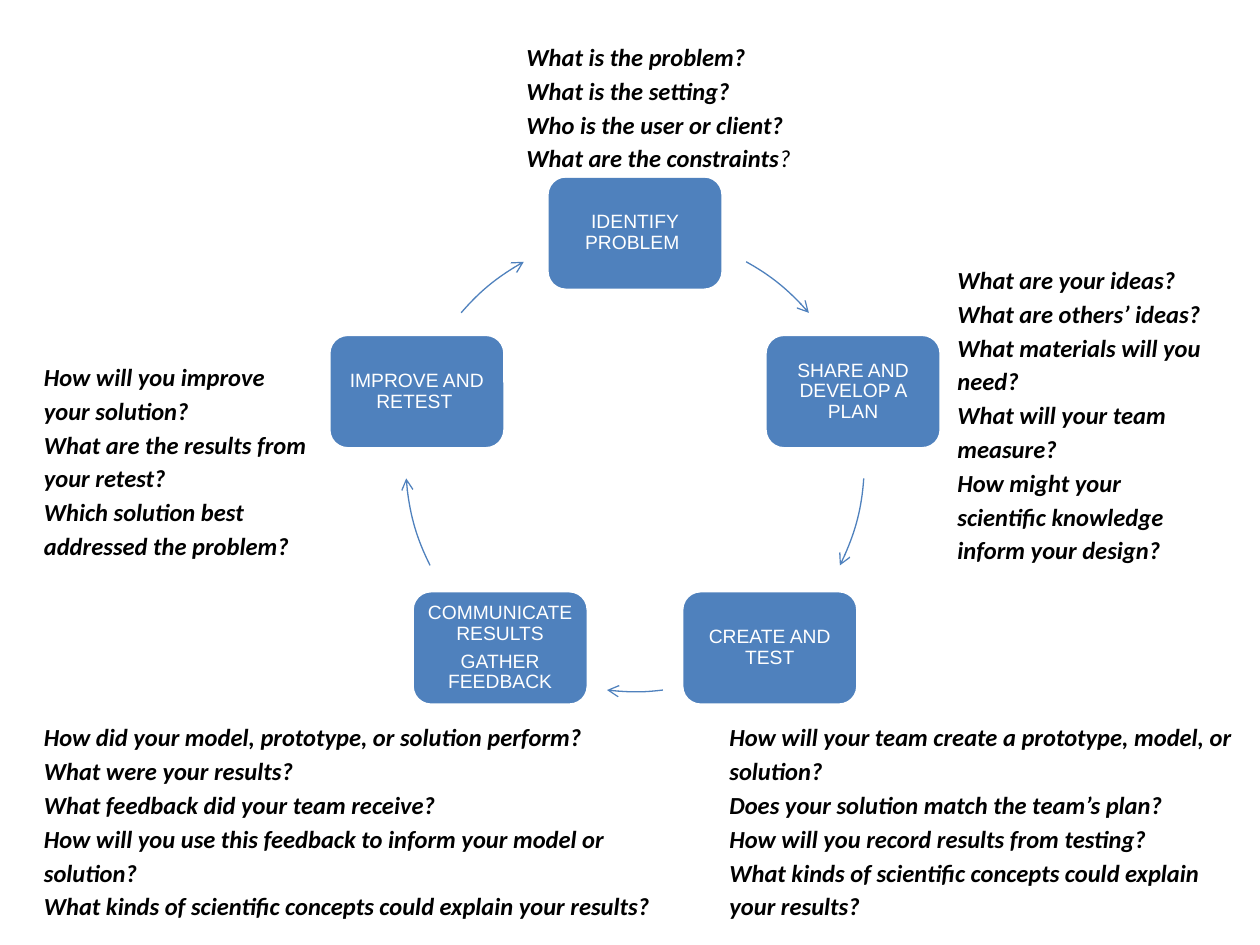
from dataclasses import dataclass
from math import cos, radians, sin, tan

from lxml.etree import SubElement
from pptx import Presentation
from pptx.dml.color import RGBColor
from pptx.enum.shapes import MSO_SHAPE
from pptx.enum.text import MSO_ANCHOR, PP_ALIGN
from pptx.oxml.ns import qn
from pptx.util import Inches, Pt


@dataclass(frozen=True)
class Theme:
    blue = RGBColor(0x4F, 0x81, 0xBD)
    white = RGBColor(0xFF, 0xFF, 0xFF)
    black = RGBColor(0, 0, 0)
    step_font = "Arial"
    question_font = "Calibri"
    step_size = Pt(11)
    question_size = Pt(14)
    step_outline = Pt(2.08)
    arrow_width = Pt(0.75)


THEME = Theme()
CENTER_X, CENTER_Y, RADIUS = 5.04, 3.67, 1.82
STEP_WIDTH, STEP_HEIGHT = 1.4, 0.91

STEPS = [
    ["IDENTIFY PROBLEM "],
    ["SHARE AND DEVELOP A PLAN"],
    ["CREATE AND TEST"],
    ["COMMUNICATE RESULTS", "GATHER FEEDBACK"],
    ["IMPROVE AND RETEST "],
]
ARROW_ANGLES = [(-61, -40.7), (4, 26.7), (83, 97), (153.3, 176), (220.7, 241)]

QUESTIONS = [
    ((4.08, 0.25, 2.73, 1.16), [
        "What is the problem?",
        "What is the setting?",
        "Who is the user or client?",
        ("What are the constraints", "?"),
    ]),
    ((7.5, 2.02, 2.17, 2.65), [
        "What are your ideas?",
        "What are others’ ideas?",
        "What materials will you need?",
        "What will your team measure?",
        "How might your scientific knowledge inform your design?",
    ]),
    ((5.69, 5.65, 4.25, 1.85), [
        "How will your team create a prototype, model, or solution?",
        "Does your solution match the team’s plan?",
        "How will you record results from testing?",
        "What kinds of scientific concepts could explain your results?",
    ]),
    ((0.25, 5.65, 5.2, 1.85), [
        "How did your model, prototype, or solution perform?",
        "What were your results?",
        "What feedback did your team receive?",
        "How will you use this feedback to inform your model or solution?",
        "What kinds of scientific concepts could explain your results?",
    ]),
    ((0.25, 2.79, 2.33, 1.88), [
        "How will you improve your solution?",
        "What are the results from your retest?",
        "Which solution best addressed the problem?",
    ]),
]


def on_circle(degrees):
    angle = radians(degrees)
    return CENTER_X + RADIUS * cos(angle), CENTER_Y + RADIUS * sin(angle)


def paragraphs_for(frame, lines):
    for index, line in enumerate(lines):
        yield (frame.add_paragraph() if index else frame.paragraphs[0]), line


def add_run(paragraph, text, font_name, size, color, bold=False, italic=False):
    run = paragraph.add_run()
    run.text = text
    font = run.font
    font.name, font.size, font.bold, font.italic = font_name, size, bold, italic
    font.color.rgb = color


def add_panel(slide, preset, box, fill):
    panel = slide.shapes.add_shape(preset, *(Inches(value) for value in box))
    panel.shadow.inherit = False
    panel.fill.solid()
    panel.fill.fore_color.rgb = fill
    panel.text_frame.word_wrap = True
    return panel


def add_step(slide, degrees, lines):
    x, y = on_circle(degrees)
    box = (x - STEP_WIDTH / 2, y - STEP_HEIGHT / 2, STEP_WIDTH, STEP_HEIGHT)
    step = add_panel(slide, MSO_SHAPE.ROUNDED_RECTANGLE, box, THEME.blue)
    step.line.color.rgb = THEME.white
    step.line.width = THEME.step_outline
    frame = step.text_frame
    frame.vertical_anchor = MSO_ANCHOR.MIDDLE
    frame.margin_left = frame.margin_right = Inches(0.05)
    frame.margin_top = frame.margin_bottom = Inches(0.05)
    for paragraph, line in paragraphs_for(frame, lines):
        paragraph.alignment = PP_ALIGN.CENTER
        paragraph.line_spacing = 0.9
        paragraph.space_after = Pt(4)
        add_run(paragraph, line, THEME.step_font, THEME.step_size, THEME.white)


def add_arc_arrow(slide, start, end):
    handle = 4 / 3 * tan(radians(end - start) / 4) * RADIUS
    (x1, y1), (x2, y2) = on_circle(start), on_circle(end)
    a, b = radians(start), radians(end)
    curve_points = [
        (x1 - handle * sin(a), y1 + handle * cos(a)),
        (x2 + handle * sin(b), y2 - handle * cos(b)),
        (x2, y2),
    ]
    top_left, bottom_right = (
        (Inches(CENTER_X + reach), Inches(CENTER_Y + reach)) for reach in (-RADIUS, RADIUS)
    )
    builder = slide.shapes.build_freeform(*top_left)
    builder.add_line_segments([bottom_right], close=False)
    builder.move_to(Inches(x1), Inches(y1))
    builder.add_line_segments([(Inches(x), Inches(y)) for x, y in curve_points], close=False)
    arrow = builder.convert_to_shape()
    arrow.shadow.inherit = False
    arrow.fill.background()
    arrow.line.color.rgb = THEME.blue
    arrow.line.width = THEME.arrow_width
    SubElement(arrow.line._get_or_add_ln(), qn("a:tailEnd"), type="arrow")

    outline = next(arrow._element.iter(qn("a:path")))
    frame_start, frame_end, _, *segments = list(outline)
    outline.remove(frame_start)
    outline.remove(frame_end)
    curve = SubElement(outline, qn("a:cubicBezTo"))
    for segment in segments:
        curve.append(segment[0])
        outline.remove(segment)


def add_questions(slide, box, questions):
    panel = add_panel(slide, MSO_SHAPE.RECTANGLE, box, THEME.white)
    panel.line.fill.background()
    frame = panel.text_frame
    frame.vertical_anchor = MSO_ANCHOR.TOP
    for paragraph, question in paragraphs_for(frame, questions):
        paragraph.alignment = PP_ALIGN.LEFT
        paragraph.line_spacing = 1.15
        parts = (question,) if isinstance(question, str) else question
        for index, part in enumerate(parts):
            add_run(paragraph, part, THEME.question_font, THEME.question_size,
                    THEME.black, bold=index == 0, italic=True)


def main():
    presentation = Presentation()
    presentation.slide_width = Inches(10)
    presentation.slide_height = Inches(7.5)
    slide = presentation.slides.add_slide(presentation.slide_layouts[6])
    for index, (lines, angles) in enumerate(zip(STEPS, ARROW_ANGLES)):
        add_step(slide, -90 + index * 360 / len(STEPS), lines)
        add_arc_arrow(slide, *angles)
    for box, questions in QUESTIONS:
        add_questions(slide, box, questions)
    presentation.save("out.pptx")


if __name__ == "__main__":
    main()
